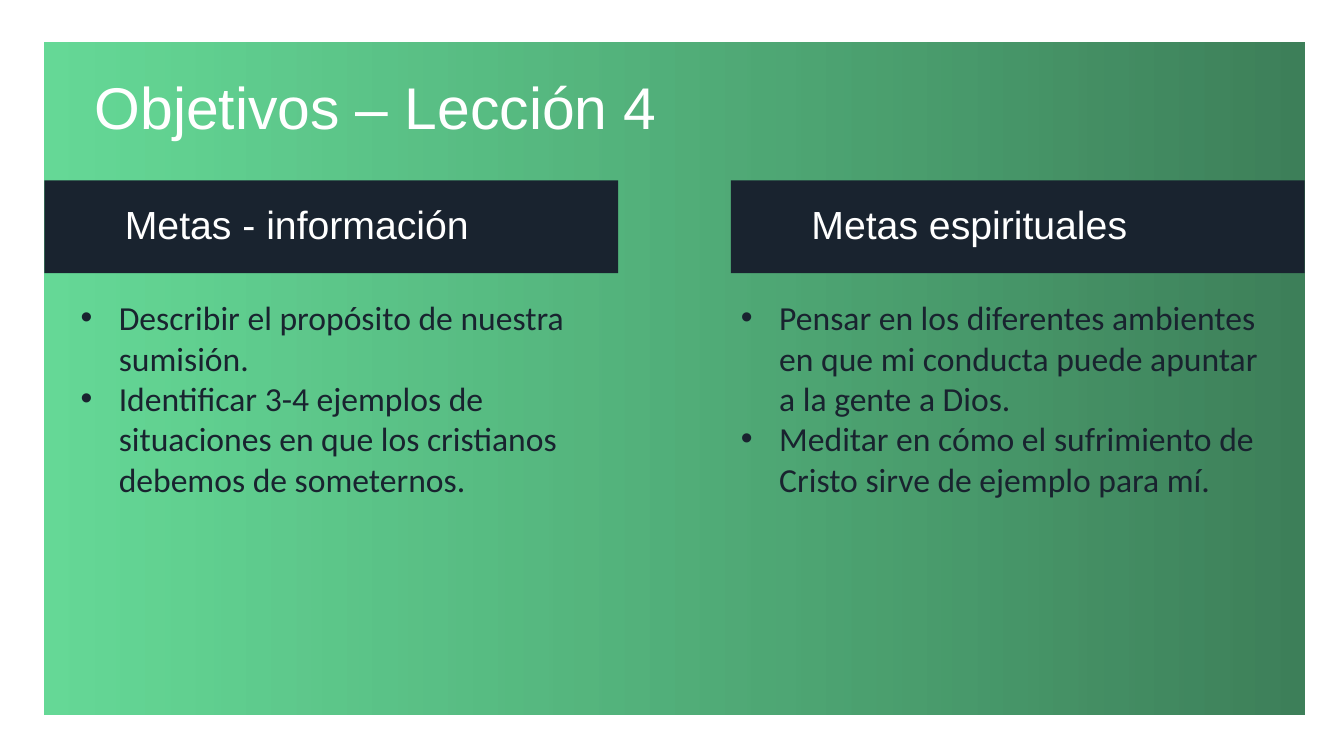
from dataclasses import dataclass
from pptx import Presentation
from pptx.dml.color import RGBColor
from pptx.enum.shapes import MSO_SHAPE as Shape
from pptx.enum.text import MSO_ANCHOR as Anchor, PP_ALIGN as Align
from pptx.oxml.ns import qn
from pptx.oxml.xmlchemy import OxmlElement as Element
from pptx.util import Inches, Pt


@dataclass(frozen=True)
class Theme:
    white: str = "FFFFFF"
    ink: str = "19232F"
    # Colour and opacity in percent at each end of the panel
    gradient: tuple = (("2CCB70", 73), ("166638", 83))
    heading_font: str = "Arial"
    body_font: str = "Calibri"
    title_size: int = 42
    heading_size: int = 28
    body_size: int = 24


THEME = Theme()
SLIDE_W, SLIDE_H = 13.33, 7.5
PANEL = (0.44, 0.42, 12.5, 6.67)
COLUMN_W = 5.69

# Heading, goals and inset of the goals from the column's left edge
COLUMNS = [
    ("Metas - información",
     ["Describir el propósito de nuestra sumisión.",
      "Identificar 3-4 ejemplos de situaciones en que los cristianos "
      "debemos de someternos."], 0.26),
    ("Metas espirituales",
     ["Pensar en los diferentes ambientes en que mi conducta puede apuntar "
      "a la gente a Dios.",
      "Meditar en cómo el sufrimiento de Cristo sirve de ejemplo para mí."], 0),
]


def add_rect(slide, box):
    rect = slide.shapes.add_shape(Shape.RECTANGLE, *map(Inches, box))
    rect.shadow.inherit = False
    rect.line.fill.background()
    return rect


def style(paragraph, font, size, color, left, hanging=0):
    properties = paragraph._p.get_or_add_pPr()
    properties.set("marL", str(Inches(left)))
    properties.set("indent", str(-Inches(hanging)))
    if hanging:
        bullet_font = Element("a:buFont")
        bullet_font.set("typeface", "Arial")
        bullet = Element("a:buChar")
        bullet.set("char", "•")
        properties.extend([bullet_font, bullet])
    paragraph.alignment = Align.LEFT
    for run in paragraph.runs:
        run.font.name = font
        run.font.size = Pt(size)
        run.font.color.rgb = RGBColor.from_string(color)


def write_heading(frame, text, size, left):
    frame.word_wrap = True
    frame.vertical_anchor = Anchor.MIDDLE
    frame.text = text
    heading = frame.paragraphs[0]
    style(heading, THEME.heading_font, size, THEME.white, left)
    heading.line_spacing = 0.9


def draw_panel(slide, box):
    fill = add_rect(slide, box).fill
    fill.gradient()
    fill.gradient_angle = 0
    for stop, (color, opacity) in zip(fill.gradient_stops, THEME.gradient):
        stop.color.rgb = RGBColor.from_string(color)
        alpha = Element("a:alpha")
        alpha.set("val", str(opacity * 1000))
        stop._gs.find(qn("a:srgbClr")).append(alpha)


def draw_title(slide, box, text):
    left, top, width, _ = box
    title = slide.shapes.add_textbox(
        Inches(left + 0.15), Inches(top + 0.36),
        Inches(width * 0.85), Inches(0.64))
    write_heading(title.text_frame, text, THEME.title_size, 0.25)


def draw_column(slide, box, heading, goals, inset):
    left, top, width, _ = box

    # Heading band
    band = add_rect(slide, (left, top, width, 0.92))
    band.fill.solid()
    band.fill.fore_color.rgb = RGBColor.from_string(THEME.ink)
    write_heading(band.text_frame, heading, THEME.heading_size, 0.7)

    # Bulleted goals
    body = slide.shapes.add_textbox(
        Inches(left + inset), Inches(top + 1.11), Inches(5.38), Inches(2.83))
    frame = body.text_frame
    frame.word_wrap = True
    frame.text = "\n".join(goals)
    for goal in frame.paragraphs:
        style(goal, THEME.body_font, THEME.body_size, THEME.ink, 0.38, 0.38)


def draw_goals_slide(slide, box):
    left, top, width, height = box
    draw_panel(slide, box)
    draw_title(slide, box, "Objetivos – Lección 4")
    step = (width - COLUMN_W) / (len(COLUMNS) - 1)
    for index, column in enumerate(COLUMNS):
        column_box = (left + index * step, top + 1.37, COLUMN_W, height - 1.37)
        draw_column(slide, column_box, *column)


def main():
    deck = Presentation()
    deck.slide_width, deck.slide_height = Inches(SLIDE_W), Inches(SLIDE_H)
    slide = deck.slides.add_slide(deck.slide_layouts[6])
    draw_goals_slide(slide, PANEL)
    deck.save("out.pptx")


if __name__ == "__main__":
    main()
